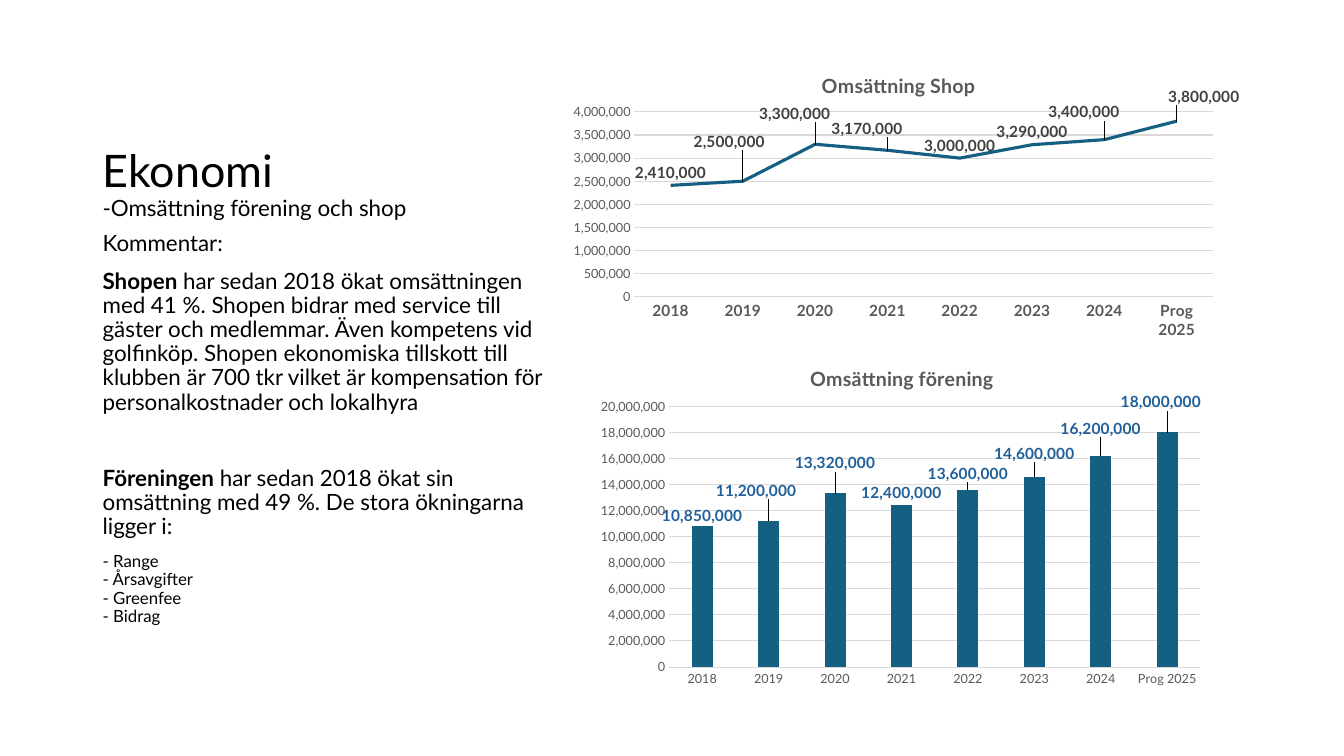
from dataclasses import dataclass

from lxml.etree import SubElement
from pptx import Presentation
from pptx.chart.chart import Chart
from pptx.chart.data import CategoryChartData
from pptx.dml.color import RGBColor
from pptx.enum.chart import XL_CHART_TYPE, XL_LABEL_POSITION, XL_TICK_MARK
from pptx.enum.text import MSO_ANCHOR
from pptx.oxml.ns import qn
from pptx.util import Inches, Pt

BLACK = RGBColor(0x00, 0x00, 0x00)
TEAL = RGBColor(0x15, 0x60, 0x82)
BLUE = RGBColor(0x21, 0x5F, 0x9A)
DARK_GRAY = RGBColor(0x40, 0x40, 0x40)
GRAY = RGBColor(0x59, 0x59, 0x59)
LIGHT_GRAY = RGBColor(0xD9, 0xD9, 0xD9)
FONT = "Lato"
NUMBER_FORMAT = "#,##0"
YEARS = ["2018", "2019", "2020", "2021", "2022", "2023", "2024", "Prog 2025"]


@dataclass
class TurnoverChart:
    """Layouts and label shifts are fractions of the chart's size."""

    title: str
    kind: XL_CHART_TYPE
    box: tuple[float, float, float, float]
    values: list[int]
    title_corner: tuple[float, float]
    plot_box: tuple[float, float, float, float]
    year_size: int
    year_bold: bool
    label_color: RGBColor
    label_position: XL_LABEL_POSITION
    label_shifts: dict[int, tuple[float, float]]


@dataclass
class Comment:
    lead: str
    text: str
    size: int = 16
    space_before: int = 10


CHARTS = [
    TurnoverChart(
        "Omsättning Shop", XL_CHART_TYPE.LINE, (5.55, 0.5, 6.75, 2.91),
        [2410000, 2500000, 3300000, 3170000, 3000000, 3290000, 3400000, 3800000],
        (0.38, 0.06), (0.11, 0.21, 0.85, 0.63), 11, True,
        DARK_GRAY, XL_LABEL_POSITION.ABOVE,
        {1: (-0.02, -0.09), 2: (-0.03, -0.06), 3: (-0.03, -0.03),
         6: (-0.03, -0.05), 7: (0.04, -0.04)},
    ),
    TurnoverChart(
        "Omsättning förening", XL_CHART_TYPE.COLUMN_CLUSTERED, (5.83, 3.41, 6.2, 3.45),
        [10850000, 11200000, 13320000, 12400000, 13600000, 14600000, 16200000, 18000000],
        (0.35, 0.05), (0.13, 0.18, 0.85, 0.75), 9, False,
        BLUE, XL_LABEL_POSITION.OUTSIDE_END,
        {0: (0, 0.01), 1: (-0.02, -0.05), 2: (0, -0.05), 4: (0, -0.01),
         5: (0, -0.03), 6: (0, -0.04), 7: (-0.01, -0.05)},
    ),
]

COMMENTS = [
    Comment("", "Kommentar:"),
    Comment("Shopen", " har sedan 2018 ökat omsättningen med 41 %. Shopen bidrar med "
            "service till gäster och medlemmar. Även kompetens vid golfinköp. Shopen "
            "ekonomiska tillskott till klubben är 700 tkr vilket är kompensation för "
            "personalkostnader och lokalhyra"),
    Comment("Föreningen", " har sedan 2018 ökat sin omsättning med 49 %. "
            "De stora ökningarna ligger i:", space_before=37),
    Comment("", "- Range\v- Årsavgifter\v- Greenfee\v- Bidrag", size=12),
]


def set_font(font, size: float, color: RGBColor, bold: bool = False) -> None:
    font.name = FONT
    font.size = Pt(size)
    font.bold = bold
    font.color.rgb = color


def set_layout(element, index: int, **settings) -> None:
    """Give a chart part a manual layout, as its child at the index."""
    for old_layout in element.findall(qn("c:layout")):
        element.remove(old_layout)
    layout = SubElement(element, qn("c:layout"))
    element.insert(index, layout)
    manual = SubElement(layout, qn("c:manualLayout"))
    for name, value in settings.items():
        SubElement(manual, qn(f"c:{name}")).set("val", str(value))


def style_axes(chart: Chart, turnover: TurnoverChart) -> None:
    years, amounts = chart.category_axis, chart.value_axis
    for axis in (years, amounts):
        axis.major_tick_mark = axis.minor_tick_mark = XL_TICK_MARK.NONE
    set_font(years.tick_labels.font, turnover.year_size, GRAY, turnover.year_bold)
    set_font(amounts.tick_labels.font, 9, GRAY)
    amounts.tick_labels.number_format = NUMBER_FORMAT
    amounts.tick_labels.number_format_is_linked = False
    amounts.format.line.fill.background()
    for line in (years.format.line, amounts.major_gridlines.format.line):
        line.color.rgb = LIGHT_GRAY
        line.width = Pt(0.75)


def style_labels(series, turnover: TurnoverChart) -> None:
    labels = series.data_labels
    labels.show_value = True
    labels.number_format = NUMBER_FORMAT
    labels.number_format_is_linked = False
    labels.position = turnover.label_position
    set_font(labels.font, 11, turnover.label_color, True)
    group = series._element.find(qn("c:dLbls"))
    for leader_lines in group.findall(qn("c:showLeaderLines")):
        group.remove(leader_lines)
    for point, (x, y) in turnover.label_shifts.items():
        label = series.points[point].data_label
        set_font(label.font, 11, turnover.label_color, True)
        label.position = turnover.label_position
    for label, (x, y) in zip(group.findall(qn("c:dLbl")), turnover.label_shifts.values()):
        set_layout(label, 1, x=x, y=y)


def add_turnover_chart(slide, turnover: TurnoverChart) -> None:
    data = CategoryChartData(number_format=NUMBER_FORMAT)
    data.categories = YEARS
    data.add_series("Series 1", turnover.values)
    box = [Inches(length) for length in turnover.box]
    chart = slide.shapes.add_chart(turnover.kind, *box, data).chart
    set_font(chart.font, 10, BLACK)
    chart.has_legend = False

    title = chart.chart_title
    title.text_frame.text = turnover.title
    set_font(title.text_frame.paragraphs[0].font, 14, GRAY, True)
    x, y = turnover.title_corner
    set_layout(title._element, 1, xMode="edge", yMode="edge", x=x, y=y)
    title.include_in_layout = False

    x, y, w, h = turnover.plot_box
    plot_area = chart._chartSpace.chart.plotArea
    set_layout(plot_area, 0, layoutTarget="inner", xMode="edge", yMode="edge",
               x=x, y=y, w=w, h=h)
    style_axes(chart, turnover)

    plot = chart.plots[0]
    plot.vary_by_categories = False
    series = plot.series[0]
    if turnover.kind == XL_CHART_TYPE.LINE:
        series.smooth = False
        series.format.line.color.rgb = TEAL
        series.format.line.width = Pt(2.25)
    else:
        plot.gap_width = 219
        plot.overlap = -27
        series.format.fill.solid()
        series.format.fill.fore_color.rgb = TEAL
    style_labels(series, turnover)


def add_text_frame(slide, left: float, top: float, width: float, height: float):
    box = slide.shapes.add_textbox(Inches(left), Inches(top), Inches(width), Inches(height))
    box.text_frame.word_wrap = True
    return box.text_frame


def add_heading(slide) -> None:
    frame = add_text_frame(slide, 0.92, 0.5, 4.3, 1.75)
    frame.vertical_anchor = MSO_ANCHOR.BOTTOM
    paragraph = frame.paragraphs[0]
    paragraph.line_spacing = 0.9
    set_font(paragraph.font, 32, BLACK)
    paragraph.add_run().text = "Ekonomi"
    paragraph.add_line_break()
    subtitle = paragraph.add_run()
    subtitle.text = "-Omsättning förening och shop"
    subtitle.font.size = Pt(16)


def add_comments(slide) -> None:
    frame = add_text_frame(slide, 0.92, 2.25, 4.63, 4.17)
    for index, comment in enumerate(COMMENTS):
        paragraph = frame.add_paragraph() if index else frame.paragraphs[0]
        paragraph.text = comment.text
        paragraph.line_spacing = 0.9
        paragraph.space_before = Pt(comment.space_before)
        set_font(paragraph.font, comment.size, BLACK)
        if comment.lead:
            paragraph.runs[0].text = comment.lead
            paragraph.runs[0].font.bold = True
            paragraph.add_run().text = comment.text


def main() -> None:
    presentation = Presentation()
    presentation.slide_width = Inches(13.33)
    presentation.slide_height = Inches(7.5)
    slide = presentation.slides.add_slide(presentation.slide_layouts[6])
    add_heading(slide)
    add_comments(slide)
    for turnover in CHARTS:
        add_turnover_chart(slide, turnover)
    presentation.save("out.pptx")


if __name__ == "__main__":
    main()
